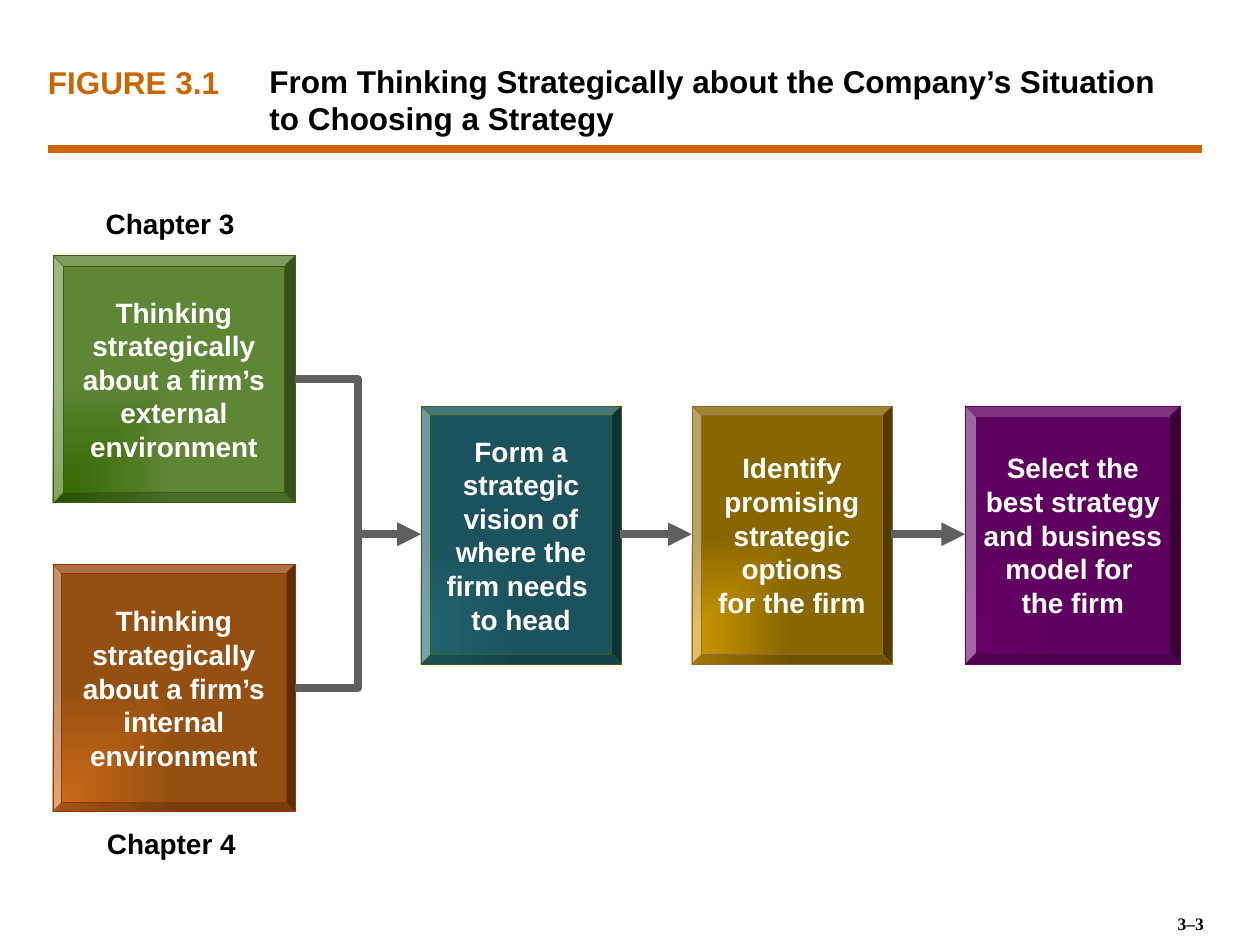
from lxml import etree
from pptx import Presentation
from pptx.dml.color import RGBColor
from pptx.enum import shapes, text
from pptx.oxml.ns import qn
from pptx.util import Inches, Pt

COLORS = {
    "accent": "CC6600", "ink": "000000", "white": "FFFFFF", "arrow": "5F5F5F",
    "green": "336600", "green_end": "5D8635",
    "rust": "CC6C18", "rust_end": "954F11", "rust_line": "993300",
    "teal": "216471", "teal_end": "1B525D",
    "gold": "CC9900", "gold_end": "886600", "gold_line": "996633",
    "purple": "660066", "purple_end": "5E005E",
}
CENTER = text.PP_ALIGN.CENTER


def rgb(name):
    return RGBColor.from_string(COLORS[name])


def write(frame, words, size, color, align=None, font="Arial"):
    """Fill a text frame with bold text, one paragraph per line of words."""
    frame.text = words
    for paragraph in frame.paragraphs:
        paragraph.alignment = align
        paragraph.font.name = font
        paragraph.font.size = Pt(size)
        paragraph.font.bold = True
        paragraph.font.color.rgb = rgb(color)


prs = Presentation()
prs.slide_width, prs.slide_height = Inches(10), Inches(7.5)
slide = prs.slides.add_slide(prs.slide_layouts[6])

# Heading, chapter labels and page number
labels = [
    ("FIGURE 3.1", 0.38, 0.45, 1.85, 0.4, 18, "accent", None, "Arial"),
    ("From Thinking Strategically about the Company’s Situation to Choosing a Strategy",
     2.04, 0.44, 7.5, 0.71, 18, "ink", None, "Arial"),
    ("Chapter 3", 0.51, 1.59, 1.68, 0.37, 16, "ink", CENTER, "Arial"),
    ("Chapter 4", 0.52, 6.51, 1.68, 0.37, 16, "ink", CENTER, "Arial"),
    ("3–3", 9.2, 7.2, 0.5, 0.27, 10, "ink", CENTER, "Times New Roman"),
]
for words, left, top, width, height, size, color, align, font in labels:
    label = slide.shapes.add_textbox(Inches(left), Inches(top), Inches(width), Inches(height))
    label.text_frame.word_wrap = True
    if color == "accent":
        label.text_frame.margin_left = label.text_frame.margin_right = 0
    write(label.text_frame, words, size, color, align, font)

# Steps: two parallel inputs, then three in a row
MIDDLE = 4.24
steps = [
    ("Thinking\nstrategically\nabout a firm’s\nexternal\nenvironment",
     0.42, 2.03, 1.92, 1.96, 0.042, "green", "green_end", "green"),
    ("Thinking\nstrategically\nabout a firm’s\ninternal\nenvironment",
     0.42, 4.48, 1.92, 1.96, 0.036, "rust", "rust_end", "rust_line"),
    ("Form a\nstrategic\nvision of\nwhere the\nfirm needs \vto head",
     3.34, 3.22, 1.59, 2.05, 0.049, "teal", "teal_end", "green"),
    ("Identify\npromising\nstrategic\noptions\nfor the firm",
     5.49, 3.22, 1.59, 2.05, 0.048, "gold", "gold_end", "gold_line"),
    ("Select the\nbest strategy\nand business\nmodel for \vthe firm",
     7.66, 3.22, 1.71, 2.05, 0.052, "purple", "purple_end", "purple"),
]
for words, left, top, width, height, edge, start, end, outline in steps:
    step = slide.shapes.add_shape(shapes.MSO_SHAPE.BEVEL, Inches(left), Inches(top),
                                  Inches(width), Inches(height))
    step.adjustments[0] = edge
    step.shadow.inherit = False
    step.line.color.rgb = rgb(outline)
    step.line.width = Pt(0.25)

    # Gradient spreading from the bottom left corner
    step.fill.gradient()
    for stop, color in zip(step.fill.gradient_stops, (start, end)):
        stop.color.rgb = rgb(color)
    gradient = step.fill._xPr.find(qn("a:gradFill"))
    linear = gradient.find(qn("a:lin"))
    spread = etree.Element(qn("a:path"), {"path": "rect"})
    etree.SubElement(spread, qn("a:fillToRect"), {"t": "100000", "r": "100000"})
    gradient.replace(linear, spread)

    step.text_frame.word_wrap = False
    step.text_frame.vertical_anchor = text.MSO_ANCHOR.MIDDLE
    write(step.text_frame, words, 16, "white", CENTER)

# Heading rule and the arrows between steps
STRAIGHT, ELBOW = shapes.MSO_CONNECTOR.STRAIGHT, shapes.MSO_CONNECTOR.ELBOW
lines = [
    (STRAIGHT, 0.38, 1.18, 9.54, 1.18, "accent"),
    (ELBOW, 2.34, 3.01, 3.34, MIDDLE, "arrow"),
    (ELBOW, 2.34, 5.46, 3.34, MIDDLE, "arrow"),
    (STRAIGHT, 4.92, MIDDLE, 5.49, MIDDLE, "arrow"),
    (STRAIGHT, 7.07, MIDDLE, 7.66, MIDDLE, "arrow"),
]
for kind, x1, y1, x2, y2, color in lines:
    line = slide.shapes.add_connector(kind, Inches(x1), Inches(y1), Inches(x2), Inches(y2))
    line.line.color.rgb = rgb(color)
    line.line.width = Pt(4.5)
    if color == "arrow":
        etree.SubElement(line.line._get_or_add_ln(), qn("a:tailEnd"), {"type": "triangle"})
    etree.SubElement(line._element.spPr, qn("a:effectLst"))

prs.save("out.pptx")
